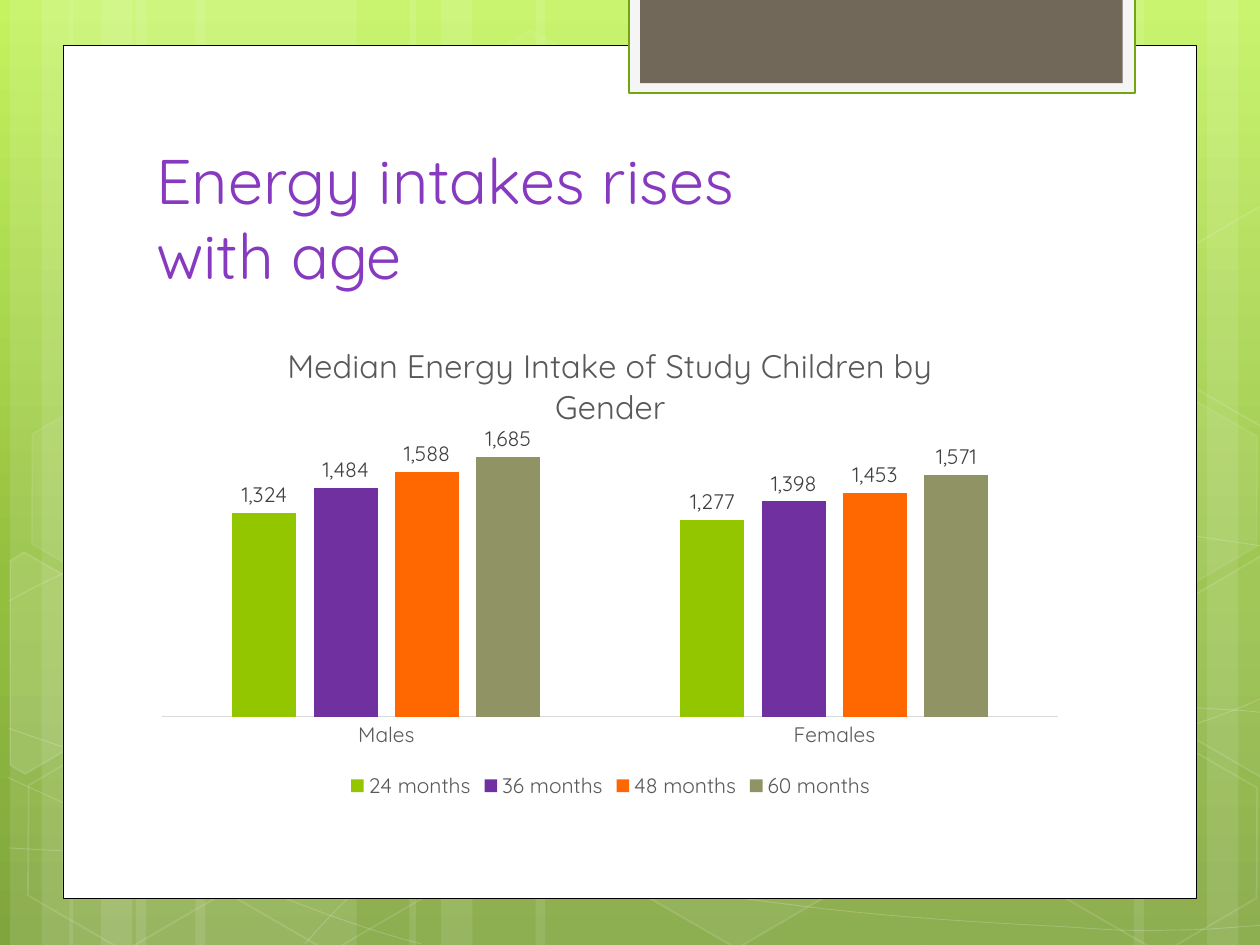
import copy
import math

import pptx
import pptx.util
import pptx.chart.data
import pptx.dml.color
import pptx.enum.chart
import pptx.enum.shapes
import pptx.enum.text
import pptx.oxml
import pptx.oxml.ns

Inches = pptx.util.Inches
Pt = pptx.util.Pt
KIND = pptx.enum.shapes.MSO_SHAPE
qn = pptx.oxml.ns.qn
FONT = "Quicksand"
WHITE = "FFFFFF"
TILT = 30

# Left and width of the full-height bands
BANDS = [(1.08, 1.75), (0.08, 0.5), (0.33, 0.83), (1.55, 1.75),
         (0.55, 0.5), (0.8, 0.83), (7.33, 1.75), (9.58, 0.5),
         (9, 0.83), (4.25, 3.08), (3.25, 0.5), (3.5, 0.83)]

# Start point, then one row per piece: a bend has two handles and an end
CURVES = [
    [[(0.07, 6.73)], [(0.61, 6.76), (1.15, 6.79), (1.9, 6.78)],
     [(2.65, 6.77), (3.58, 6.75), (4.58, 6.65)],
     [(5.58, 6.55), (7, 6.36), (7.92, 6.17)],
     [(8.83, 5.98), (9.77, 5.68), (10.07, 5.51)]],
    [[(0.07, 4.77)], [(0.36, 4.61), (0.65, 4.46), (1.21, 4.31)],
     [(1.78, 4.16), (2.59, 3.94), (3.47, 3.87)],
     [(4.36, 3.8), (5.44, 3.79), (6.54, 3.87)],
     [(7.64, 3.95), (9.47, 4.26), (10.07, 4.34)]],
    [[(0.06, 6.17)], [(1.27, 6.72), (2.47, 7.27), (3.34, 7.49)]],
    [[(0.07, 5.78)], [(0.38, 5.89), (0.7, 6), (1.28, 6.16)],
     [(1.86, 6.31), (2.73, 6.56), (3.57, 6.73)],
     [(4.4, 6.9), (5.45, 7.08), (6.28, 7.18)],
     [(7.11, 7.29), (8, 7.33), (8.53, 7.36)],
     [(9.05, 7.4), (9.19, 7.38), (9.45, 7.38)],
     [(9.71, 7.37), (9.89, 7.35), (10.07, 7.34)]],
    [[(2.42, 7.49)], [(2.6, 7.29), (2.78, 7.09), (3.02, 6.91)],
     [(3.26, 6.73), (3.6, 6.53), (3.88, 6.39)],
     [(4.16, 6.25), (4.33, 6.19), (4.7, 6.09)],
     [(5.06, 5.99), (5.73, 5.85), (6.08, 5.78)],
     [(6.44, 5.71), (6.49, 5.71), (6.8, 5.69)],
     [(7.11, 5.66), (7.6, 5.63), (7.94, 5.62)],
     [(8.29, 5.61), (8.86, 5.62), (8.86, 5.62)], [(9.53, 5.62)],
     [(9.71, 5.63), (9.88, 5.64), (9.97, 5.65)],
     [(10.06, 5.66), (10.03, 5.65), (10.06, 5.66)]],
]

# Left, top, fill opacity and line opacity (percent)
CELLS = [(3.34, 0.36, 4, 8), (4.97, 5.89, 6, 12), (0.11, 5.91, 0, 12),
         (0.14, 3.12, 7, 8), (1.74, 5.92, 0, 12), (7.53, 4.53, 10, 12),
         (8.34, 5.93, 0, 12), (8.34, 3.14, 7, 8)]

# Cells cut off by the slide edge: centre, fill opacity and outline
EDGES = [
    ((0.36, 5.35), 10, [(0.08, 4.45), (0.19, 4.38), (0.96, 4.82),
                        (0.95, 5.7), (0.2, 6.14), (0.08, 6.07)]),
    ((9.85, 5.2), 4, [(9.26, 4.85), (10.01, 4.41), (10.09, 4.46),
                      (10.09, 6.13), (10.02, 6.17), (9.26, 5.73)]),
    ((9.85, 2.41), 0, [(9.26, 2.07), (10.01, 1.63), (10.1, 1.68),
                       (10.09, 3.35), (10.02, 3.39), (9.26, 2.95)]),
]


def rgb(code):
    return pptx.dml.color.RGBColor.from_string(code)


def paint(fill, code, alpha=100):
    """Solid fill; an opacity of zero means no fill."""
    if not alpha:
        fill.background()
        return
    fill.solid()
    fill.fore_color.rgb = rgb(code)
    if alpha < 100:
        tone = fill._xPr.find(".//" + qn("a:srgbClr"))
        tone.append(pptx.oxml.parse_xml(
            f'<a:alpha {pptx.oxml.ns.nsdecls("a")} val="{alpha * 1000}"/>'))


def style(shape, code=WHITE, alpha=100, edge=None, width=1, clear=100):
    shape.shadow.inherit = False
    paint(shape.fill, code, alpha)
    if edge:
        paint(shape.line.fill, edge, clear)
        shape.line.width = Pt(width)
    else:
        shape.line.fill.background()


def block(slide, kind, box, **look):
    shape = slide.shapes.add_shape(kind, *map(Inches, box))
    style(shape, **look)
    return shape


def outline(slide, dots, close, **look):
    dots = [(Inches(x), Inches(y)) for x, y in dots]
    pen = slide.shapes.build_freeform(*dots[0], scale=1.0)
    pen.add_line_segments(dots[1:], close=close)
    shape = pen.convert_to_shape()
    style(shape, **look)
    return shape


def curve(slide, parts):
    """Draw the points in order, then join each three into one bend."""
    shape = outline(slide, sum(parts, []), False, alpha=0, edge=WHITE,
                    width=0.5, clear=20)
    legs = iter(list(shape.element.iter(qn("a:lnTo"))))
    for part in parts[1:]:
        group = [next(legs) for _ in part]
        if len(group) == 3:
            arc = pptx.oxml.parse_xml(
                f'<a:cubicBezTo {pptx.oxml.ns.nsdecls("a")}/>')
            group[0].addprevious(arc)
            for leg in group:
                arc.append(leg[0])
                leg.getparent().remove(leg)


def untilt(dot, mid):
    turn = math.radians(TILT)
    x, y = dot[0] - mid[0], dot[1] - mid[1]
    return (mid[0] + x * math.cos(turn) + y * math.sin(turn),
            mid[1] - x * math.sin(turn) + y * math.cos(turn))


def font_set(font, size, code):
    font.name = FONT
    font.size = Pt(size)
    font.bold = False
    font.color.rgb = rgb(code)


def backdrop(slide):
    fill = slide.background.fill
    fill.gradient()
    fill.gradient_angle = 270
    stops = slide.element.find(".//" + qn("a:gsLst"))
    stops.append(copy.deepcopy(stops[-1]))
    tones = [(0, "C3F35F"), (0.62, "93BF3F"), (1, "81A53E")]
    for stop, (place, code) in zip(fill.gradient_stops, tones):
        stop.position = place
        stop.color.rgb = rgb(code)


def pattern(slide):
    for left, width in BANDS:
        block(slide, KIND.RECTANGLE, (left, 0, width, 7.5), alpha=10)
    for parts in CURVES:
        curve(slide, parts)
    for left, top, alpha, clear in CELLS:
        cell = block(slide, KIND.HEXAGON, (left, top, 1.75, 1.52),
                     alpha=alpha, edge=WHITE, clear=clear)
        cell.adjustments[0] = 0.285
        cell.rotation = TILT
    for mid, alpha, dots in EDGES:
        cell = outline(slide, [untilt(dot, mid) for dot in dots], True,
                       alpha=alpha, edge=WHITE, clear=12)
        cell.rotation = TILT


def title(slide, lines):
    box = slide.shapes.add_textbox(*map(Inches, (1.14, 1.12, 7.68, 1.25)))
    frame = box.text_frame
    frame.word_wrap = True
    frame.vertical_anchor = pptx.enum.text.MSO_ANCHOR.BOTTOM
    para = frame.paragraphs[0]
    for i, line in enumerate(lines):
        if i:
            para.add_line_break()
        run = para.add_run()
        run.text = line
        font_set(run.font, 36, "873AC0")


def layout(plot, x, y, w, h):
    """Fix the inner plot area as shares of the chart."""
    old = plot.find(qn("c:layout"))
    if old is not None:
        plot.remove(old)
    spots = "".join(f'<c:{k} val="{v}"/>' for k, v in zip("xywh", (x, y, w, h)))
    plot.insert(0, pptx.oxml.parse_xml(
        f'<c:layout {pptx.oxml.ns.nsdecls("c")}><c:manualLayout>'
        '<c:layoutTarget val="inner"/><c:xMode val="edge"/><c:yMode val="edge"/>'
        f'{spots}</c:manualLayout></c:layout>'))


def graph(slide):
    enum = pptx.enum.chart
    rows = [("24 months", (1324, 1277), "94C600"),
            ("36 months", (1484, 1398), "7030A0"),
            ("48 months", (1588, 1453), "FF6700"),
            ("60 months", (1685, 1571), "909465")]
    data = pptx.chart.data.CategoryChartData(number_format="#,##0")
    data.categories = ["Males", "Females"]
    for name, vals, _ in rows:
        data.add_series(name, vals)
    chart = slide.shapes.add_chart(
        enum.XL_CHART_TYPE.COLUMN_CLUSTERED,
        *map(Inches, (1.14, 2.54, 7.41, 3.84)), data).chart
    font_set(chart.font, 10, "000000")
    # Heading and legend
    chart.has_title = True
    run = chart.chart_title.text_frame.paragraphs[0].add_run()
    run.text = "Median Energy Intake of Study Children by Gender"
    font_set(run.font, 18.6, "595959")
    chart.chart_title.include_in_layout = False
    chart.has_legend = True
    chart.legend.position = enum.XL_LEGEND_POSITION.BOTTOM
    chart.legend.include_in_layout = False
    font_set(chart.legend.font, 12, "595959")
    # Axes
    axis = chart.value_axis
    axis.minimum_scale, axis.maximum_scale = 0, 1790
    axis.has_major_gridlines = False
    axis.visible = False
    axis = chart.category_axis
    axis.major_tick_mark = enum.XL_TICK_MARK.NONE
    font_set(axis.tick_labels.font, 12, "595959")
    axis.format.line.color.rgb = rgb("D9D9D9")
    axis.format.line.width = Pt(0.75)
    # Columns and their values
    plot = chart.plots[0]
    plot.vary_by_categories = False
    plot.gap_width, plot.overlap = 219, -27
    for bar, (_, _, code) in zip(plot.series, rows):
        paint(bar.format.fill, code)
        tags = bar.data_labels
        tags.show_value = True
        tags.number_format = "#,##0"
        tags.number_format_is_linked = False
        tags.position = enum.XL_LABEL_POSITION.OUTSIDE_END
        font_set(tags.font, 12, "404040")
    layout(chart.element.find(".//" + qn("c:plotArea")), 0.02, 0.25, 0.96, 0.57)


def main():
    deck = pptx.Presentation()
    deck.slide_width, deck.slide_height = Inches(10), Inches(7.5)
    slide = deck.slides.add_slide(deck.slide_layouts[6])
    backdrop(slide)
    pattern(slide)
    # Page panel and the tab on its top edge
    block(slide, KIND.RECTANGLE, (0.5, 0.36, 9, 6.77), edge="000000", width=0.5)
    block(slide, KIND.RECTANGLE, (4.99, -0.02, 4.02, 0.76), code="F5F5F5",
          edge="74A510", width=1.25)
    block(slide, KIND.RECTANGLE, (5.08, -0.02, 3.83, 0.68), code="71685A")
    title(slide, ["Energy intakes rises ", "with age"])
    graph(slide)
    deck.save("out.pptx")


if __name__ == "__main__":
    main()
